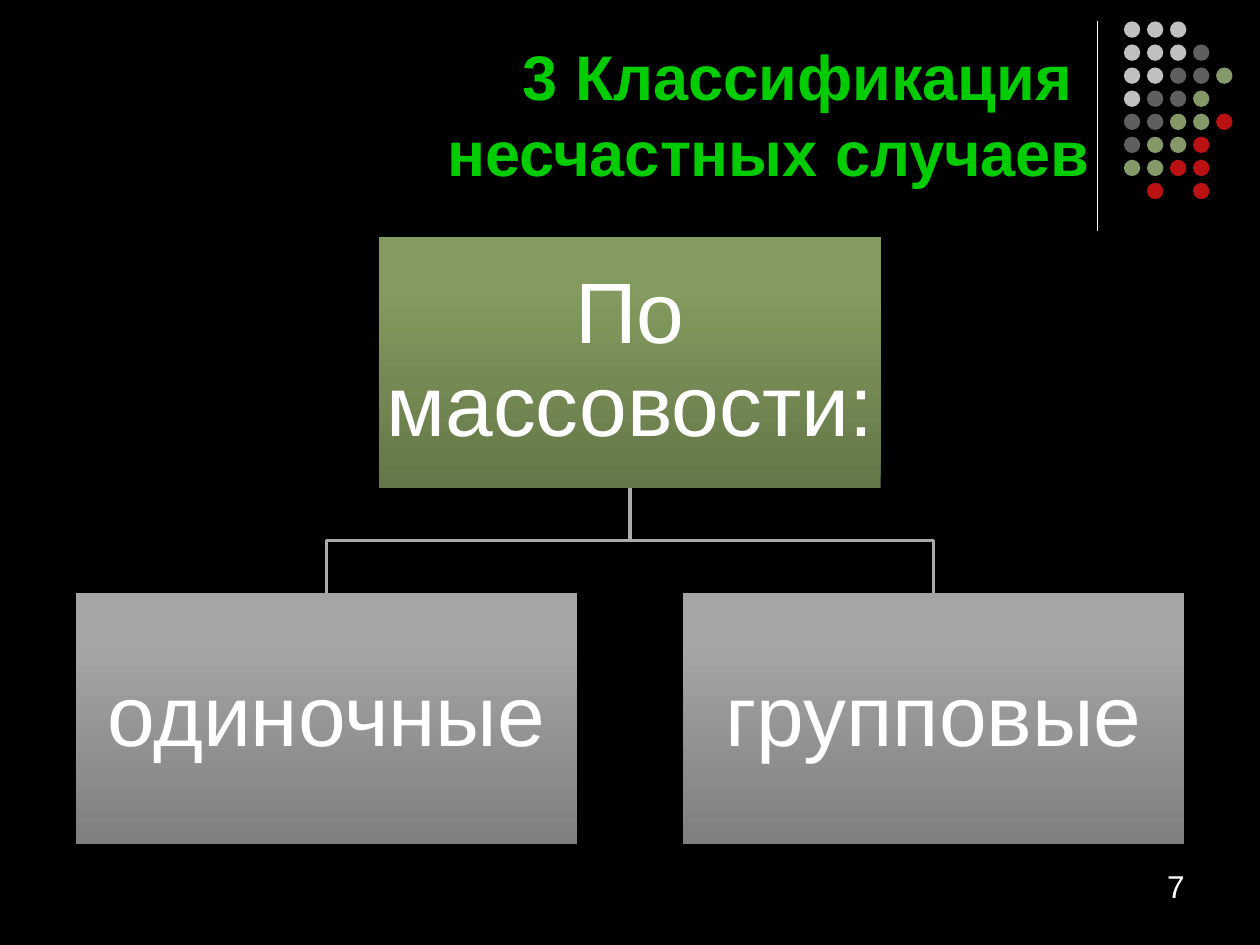
from pptx import Presentation
from pptx.dml.color import RGBColor
from pptx.enum.shapes import MSO_CONNECTOR, MSO_SHAPE
from pptx.enum.text import MSO_ANCHOR, MSO_AUTO_SIZE, PP_ALIGN
from pptx.oxml.ns import qn
from pptx.util import Inches, Pt
from lxml import etree

BLACK = RGBColor(0x00, 0x00, 0x00)
WHITE = RGBColor(0xFF, 0xFF, 0xFF)
GREEN = RGBColor(0x00, 0xCC, 0x00)
SILVER = RGBColor(0xC0, 0xC0, 0xC0)
DARK_GRAY = RGBColor(0x5F, 0x5F, 0x5F)
OLIVE = RGBColor(0x85, 0x98, 0x68)
RED = RGBColor(0xBA, 0x12, 0x12)
BRANCH_GRAY = RGBColor(0xAA, 0xAA, 0xAA)
OLIVE_GRADIENT = (RGBColor(0x64, 0x77, 0x48), RGBColor(0x83, 0x9B, 0x5E))
GRAY_GRADIENT = (RGBColor(0x7F, 0x7F, 0x7F), RGBColor(0xA5, 0xA5, 0xA5))

RECTANGLE, OVAL = MSO_SHAPE.RECTANGLE, MSO_SHAPE.OVAL
STRAIGHT = MSO_CONNECTOR.STRAIGHT
MIDDLE, BOTTOM = MSO_ANCHOR.MIDDLE, MSO_ANCHOR.BOTTOM
CENTER, RIGHT = PP_ALIGN.CENTER, PP_ALIGN.RIGHT
NO_AUTOFIT = MSO_AUTO_SIZE.NONE

FONT = "Arial"
TITLE_ONLY = 5
DOT_COLORS = {"s": SILVER, "g": DARK_GRAY, "o": OLIVE, "r": RED}
DOT_ROWS = ("sss", "sssg", "ssggo", "sggo", "ggoor", "goor", "oorr", " r r")
DOT_SIZE, DOT_STEP = 0.13, 0.183
BOX_WIDTH, BOX_HEIGHT = 3.98, 1.99
ROOT_LEFT, ROOT_TOP = 3.01, 1.88
CHILD_TOP = 4.71
CHILDREN = ((0.6, "одиночные"), (5.42, "групповые"))


def write_text(frame, text, size, color, alignment, bold=False):
    """Put one formatted paragraph into a text frame."""
    frame.text = text
    frame.word_wrap = True
    frame.auto_size = NO_AUTOFIT
    para = frame.paragraphs[0]
    para.alignment = alignment
    for span in para.runs:
        span.font.name = FONT
        span.font.size = Pt(size)
        span.font.bold = bold
        span.font.color.rgb = color
    return para


def add_title(page, text):
    """Move and format the title placeholder."""
    title = page.shapes.title
    title.left, title.top = Inches(0.5), Inches(0.13)
    title.width, title.height = Inches(8.25), Inches(1.42)
    title.text_frame.vertical_anchor = BOTTOM
    write_text(title.text_frame, text, 36, GREEN, RIGHT, bold=True)


def add_divider(page):
    """Draw the vertical line beside the title."""
    divider = page.shapes.add_connector(
        STRAIGHT, Inches(8.71), Inches(0.17), Inches(8.71), Inches(1.83))
    divider.line.color.rgb = WHITE
    divider.line.width = Pt(0.75)
    etree.SubElement(divider.element.spPr, qn("a:effectLst"))


def add_dots(page):
    """Draw the corner ornament as a group of dots on a grid."""
    group = page.shapes.add_group_shape()
    for row, codes in enumerate(DOT_ROWS):
        for column, code in enumerate(codes):
            if code in DOT_COLORS:
                dot = group.shapes.add_shape(
                    OVAL, Inches(8.92 + column * DOT_STEP),
                    Inches(0.17 + row * DOT_STEP),
                    Inches(DOT_SIZE), Inches(DOT_SIZE))
                dot.shadow.inherit = False
                dot.fill.solid()
                dot.fill.fore_color.rgb = DOT_COLORS[code]
                dot.line.fill.background()


def add_branch(page, child_left):
    """Draw the elbow from the root box to a child box."""
    start_x, end_x = ROOT_LEFT + BOX_WIDTH / 2, child_left + BOX_WIDTH / 2
    start_y = ROOT_TOP + BOX_HEIGHT
    middle_y = (start_y + CHILD_TOP) / 2
    builder = page.shapes.build_freeform(
        Inches(start_x), Inches(start_y))
    corners = ((start_x, middle_y), (end_x, middle_y), (end_x, CHILD_TOP))
    builder.add_line_segments(
        [(Inches(x), Inches(y)) for x, y in corners], close=False)
    branch = builder.convert_to_shape()
    branch.shadow.inherit = False
    branch.fill.background()
    branch.line.color.rgb = BRANCH_GRAY
    branch.line.width = Pt(2)


def add_box(page, left, top, text, gradient):
    """Add a labelled box shaded from its bottom upwards."""
    box = page.shapes.add_shape(
        RECTANGLE, Inches(left), Inches(top),
        Inches(BOX_WIDTH), Inches(BOX_HEIGHT))
    box.shadow.inherit = False
    box.line.fill.background()
    box.fill.gradient()
    box.fill.gradient_angle = 90
    for stop, position, color in zip(
            box.fill.gradient_stops, (0, 0.8), gradient):
        stop.position = position
        stop.color.rgb = color
    frame = box.text_frame
    frame.margin_left = frame.margin_right = Inches(0.03)
    frame.margin_top = frame.margin_bottom = Inches(0.03)
    frame.vertical_anchor = MIDDLE
    para = write_text(frame, text, 49, WHITE, CENTER)
    para.line_spacing = 0.9


def add_page_number(page, number):
    """Add the page number at the lower right."""
    box = page.shapes.add_textbox(
        Inches(7.17), Inches(6.83), Inches(2.33), Inches(0.5))
    write_text(box.text_frame, number, 18, WHITE, RIGHT)


def main():
    """Build and save the deck."""
    deck = Presentation()
    deck.slide_width, deck.slide_height = Inches(10), Inches(7.5)
    page = deck.slides.add_slide(deck.slide_layouts[TITLE_ONLY])
    page.background.fill.solid()
    page.background.fill.fore_color.rgb = BLACK
    add_divider(page)
    add_dots(page)
    add_title(page, "3 Классификация \vнесчастных случаев")
    for left, _ in CHILDREN:
        add_branch(page, left)
    add_box(page, ROOT_LEFT, ROOT_TOP, "По массовости:", OLIVE_GRADIENT)
    for left, text in CHILDREN:
        add_box(page, left, CHILD_TOP, text, GRAY_GRADIENT)
    add_page_number(page, "7")
    deck.save("out.pptx")


if __name__ == "__main__":
    main()
